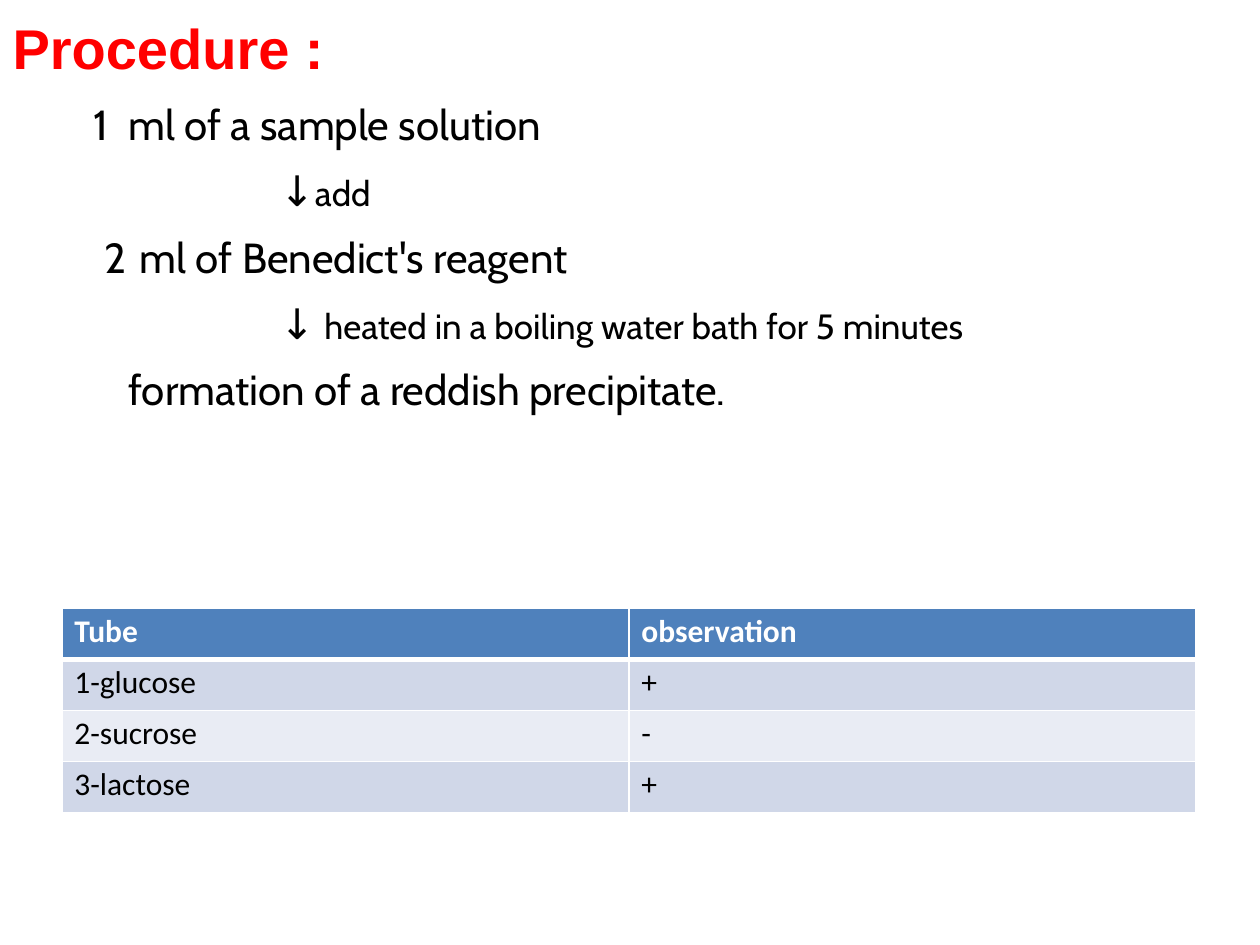
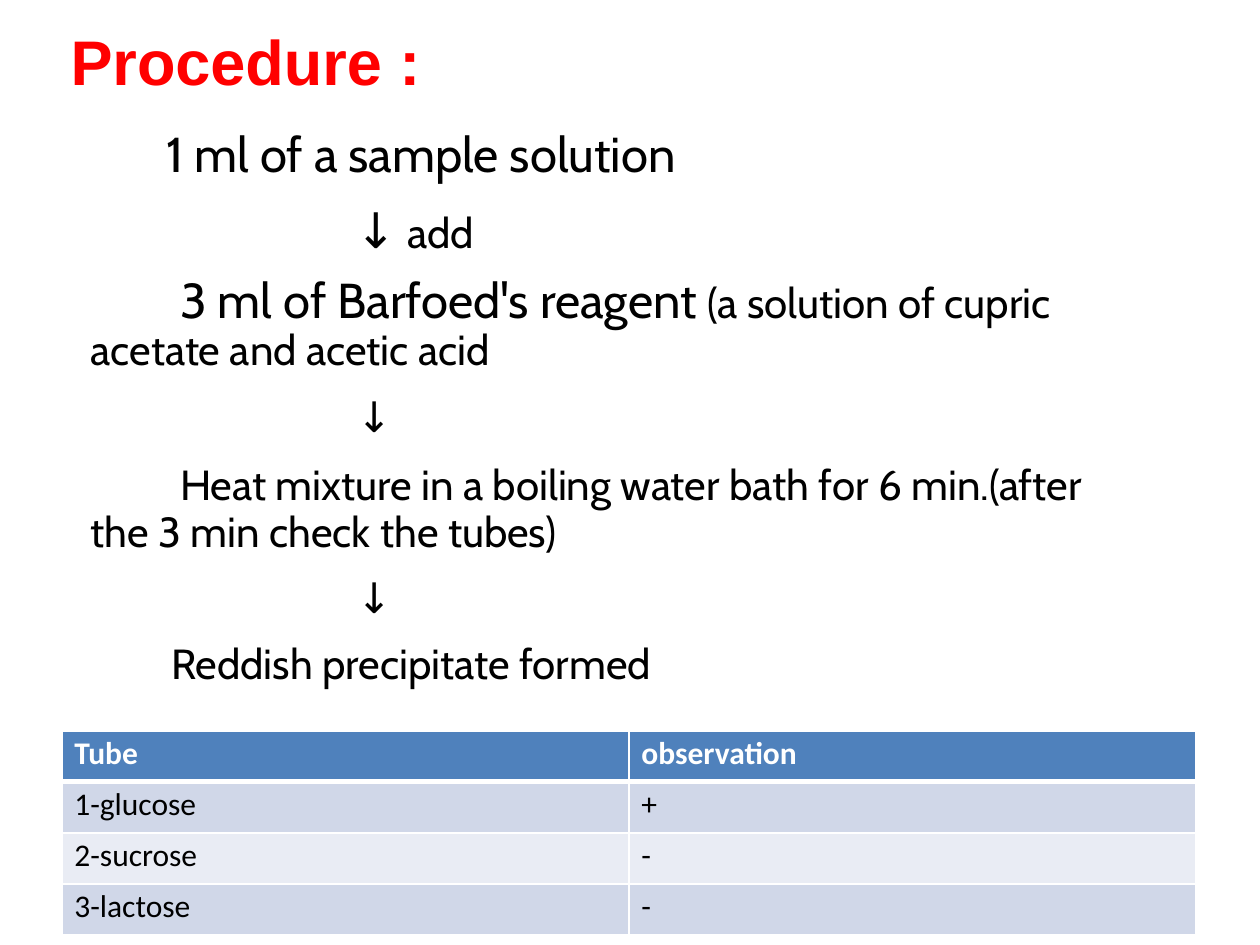
from lxml import etree
from pptx import Presentation
from pptx.dml.color import RGBColor
from pptx.enum.text import MSO_AUTO_SIZE
from pptx.oxml.ns import qn
from pptx.util import Inches, Pt

RED = RGBColor(0xFF, 0x00, 0x00)
BLACK = RGBColor(0x00, 0x00, 0x00)
WHITE = RGBColor(0xFF, 0xFF, 0xFF)
HEADER_BLUE = RGBColor(0x4F, 0x81, 0xBC)
BAND_DARK = RGBColor(0xD0, 0xD7, 0xE8)
BAND_LIGHT = RGBColor(0xE9, 0xEC, 0xF4)

NO_FIT = MSO_AUTO_SIZE.NONE
BLANK_LAYOUT = 6
HANGING = -0.28
THIN, THICK = 1, 3

# Content: each step is (indent, space before, line spacing, number, [(text, size), ...])
SLIDES = [
    {
        "title": ("Procedure :", 32, (0.09, 0.1, 2.5, 0.56)),
        "steps_box": (0.73, 0.64, 7.07, 2.66),
        "steps_top": 0.14,
        "steps": [
            (0.29, 10.1, None, 1, [("ml of a sample solution", 24)]),
            (1.49, 9.1, None, None, [("↓", 24), ("add", 20)]),
            (0.38, 9.2, None, 2, [("ml of Benedict's reagent", 24)]),
            (1.49, 9.2, None, None,
             [("↓ ", 24), ("heated in a boiling water bath for 5 minutes", 20)]),
            (0.29, 9, None, None, [("formation of a reddish precipitate.", 24)]),
        ],
        "table_top": 4.83,
        "observations": ["+", "-", "+"],
    },
    {
        "title": ("Procedure :", 36, (0.55, 0.17, 2.81, 0.63)),
        "steps_box": (0.71, 0.83, 8.22, 4.65),
        "steps_top": 0.15,
        "steps": [
            (0.61, 11.1, None, None, [("1 ml of a sample solution", 28)]),
            (2.11, 10.1, None, None, [("↓ ", 28), ("add", 24)]),
            (0.72, 8.3, 31.2, None,
             [("3 ml of Barfoed's reagent ", 28), ("(a solution of cupric", 24)]),
            (0.01, 0, 26.4, None, [("acetate and acetic acid", 24)]),
            (2.12, 9.2, None, None, [("↓", 24)]),
            (0.72, 12.1, 26.8, None,
             [("Heat mixture in a boiling water bath for 6 min.(after", 24)]),
            (0.01, 0, 26.8, None, [("the 3 min check the tubes)", 24)]),
            (2.12, 9.2, None, None, [("↓", 24)]),
            (0.65, 9.1, None, None, [("Reddish precipitate formed", 24)]),
        ],
        "table_top": 5.8,
        "observations": ["+", "-", "-"],
    },
]
TABLE_HEADER = ("Tube", "observation")
TUBES = ["1-glucose", "2-sucrose", "3-lactose"]
TABLE_LEFT, TABLE_WIDTH, TABLE_HEIGHT = 0.49, 9, 1.62


def style_font(font, name, color, size=None, bold=False):
    font.name = name
    font.color.rgb = color
    font.bold = bold
    if size:
        font.size = Pt(size)


def add_text_frame(slide, box, top_margin):
    frame = slide.shapes.add_textbox(*map(Inches, box)).text_frame
    frame.word_wrap = True
    frame.auto_size = NO_FIT
    frame.margin_left = frame.margin_right = frame.margin_bottom = 0
    frame.margin_top = Inches(top_margin)
    return frame


def set_indent(paragraph, left, number=None):
    properties = paragraph._p.get_or_add_pPr()
    properties.set("marL", str(Inches(left)))
    properties.set("indent", str(Inches(HANGING if number else 0)))
    if number:
        bullet = etree.SubElement(properties, qn("a:buAutoNum"), type="arabicPlain")
        bullet.set("startAt", str(number))


def add_title(slide, text, size, box):
    paragraph = add_text_frame(slide, box, 0.01).paragraphs[0]
    paragraph.space_before = Pt(1)
    set_indent(paragraph, 0.01)
    style_font(paragraph.font, "Arial", RED, size, bold=True)
    paragraph.add_run().text = text


def add_steps(slide, box, top_margin, steps):
    frame = add_text_frame(slide, box, top_margin)
    for index, (indent, before, spacing, number, parts) in enumerate(steps):
        paragraph = frame.add_paragraph() if index else frame.paragraphs[0]
        paragraph.space_before = Pt(before)
        if spacing:
            paragraph.line_spacing = Pt(spacing)
        set_indent(paragraph, indent, number)
        style_font(paragraph.font, "Cabin", BLACK)
        for text, size in parts:
            run = paragraph.add_run()
            run.text = text
            run.font.size = Pt(size)


def set_borders(cell, widths):
    properties = cell._tc.get_or_add_tcPr()
    for side, width in widths.items():
        line = etree.SubElement(properties, qn(f"a:ln{side}"), w=str(Pt(width)))
        fill = etree.SubElement(line, qn("a:solidFill"))
        etree.SubElement(fill, qn("a:srgbClr"), val=str(WHITE))


def add_results(slide, top, observations):
    rows = [TABLE_HEADER, *zip(TUBES, observations)]
    place = map(Inches, (TABLE_LEFT, top, TABLE_WIDTH, TABLE_HEIGHT))
    table = slide.shapes.add_table(len(rows), len(TABLE_HEADER), *place).table
    for row, values in enumerate(rows):
        is_header = row == 0
        band = HEADER_BLUE if is_header else BAND_DARK if row % 2 else BAND_LIGHT
        widths = {"L": THIN, "R": THIN,
                  "T": THICK if row == 1 else THIN,
                  "B": THICK if is_header else THIN}
        for column, value in enumerate(values):
            cell = table.cell(row, column)
            set_borders(cell, widths)
            cell.fill.solid()
            cell.fill.fore_color.rgb = band
            cell.margin_left = cell.margin_right = cell.margin_bottom = 0
            cell.margin_top = Inches(0.03)
            paragraph = cell.text_frame.paragraphs[0]
            paragraph.space_before = Pt(2.5)
            set_indent(paragraph, 0.1)
            style_font(paragraph.font, "Calibri", WHITE if is_header else BLACK,
                       18, bold=is_header)
            paragraph.add_run().text = value


def main():
    presentation = Presentation()
    presentation.slide_width = Inches(10)
    presentation.slide_height = Inches(7.5)
    for content in SLIDES:
        slide = presentation.slides.add_slide(presentation.slide_layouts[BLANK_LAYOUT])
        add_title(slide, *content["title"])
        add_steps(slide, content["steps_box"], content["steps_top"], content["steps"])
        add_results(slide, content["table_top"], content["observations"])
    presentation.save("out.pptx")


if __name__ == "__main__":
    main()
